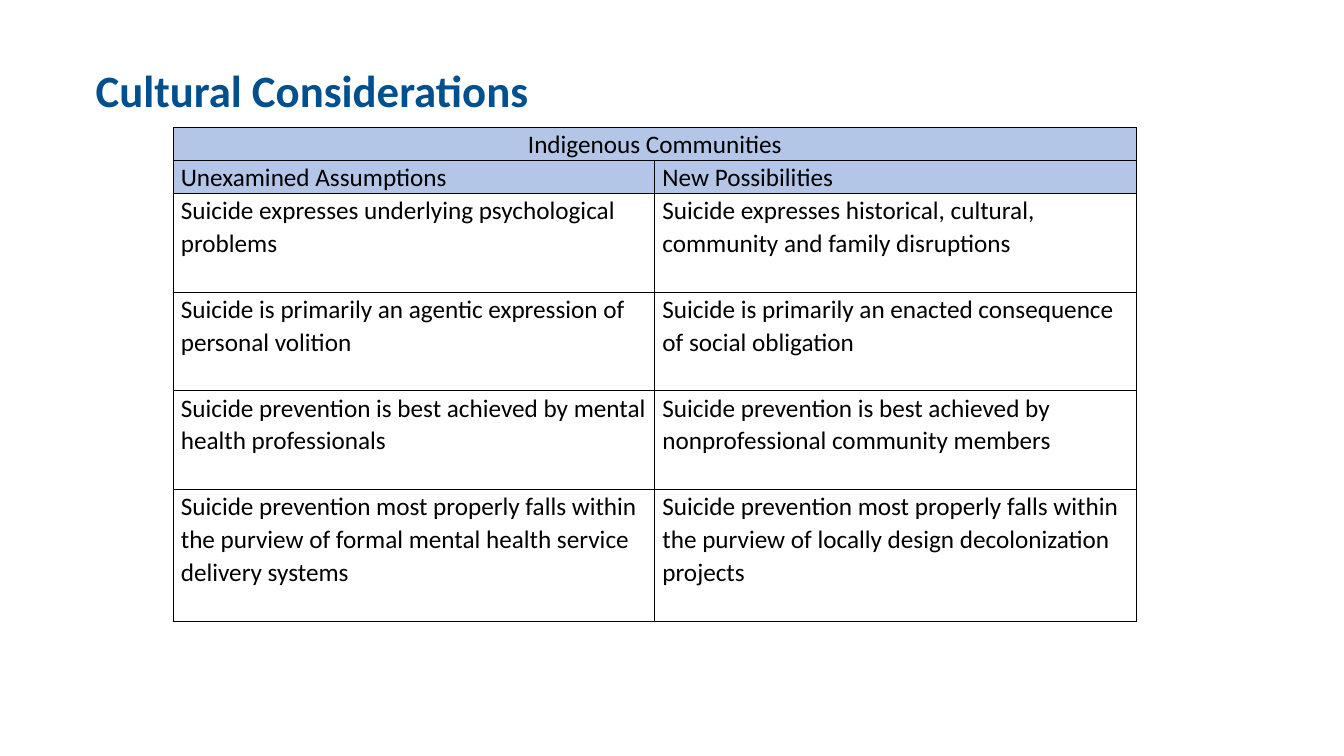
import pptx
import pptx.dml.color
import pptx.enum.text
import pptx.oxml
import pptx.oxml.ns
import pptx.util

Pt = pptx.util.Pt
FONT = "Calibri"
BLACK = "000000"
HEADER_FILL = "B4C6E7"
COMMUNITIES = "Indigenous Communities"
COMPARISON = [
    ("Unexamined Assumptions", "New Possibilities"),
    ("Suicide expresses underlying psychological problems",
     "Suicide expresses historical, cultural, community and family disruptions"),
    ("Suicide is primarily an agentic expression of personal volition",
     "Suicide is primarily an enacted consequence of social obligation"),
    ("Suicide prevention is best achieved by mental health professionals",
     "Suicide prevention is best achieved by nonprofessional community members"),
    ("Suicide prevention most properly falls within the purview of formal "
     "mental health service delivery systems",
     "Suicide prevention most properly falls within the purview of locally "
     "design decolonization projects"),
]
ROW_HEIGHTS = [23.5, 23.5, 70.5, 70.5, 70.5, 94]


def color(value):
    """Turn a hex string into a colour."""
    return pptx.dml.color.RGBColor.from_string(value)


def style_paragraph(paragraph, size, hex_color, spacing, bold=False):
    """Set the font and line spacing of a paragraph."""
    paragraph.line_spacing = spacing
    paragraph.font.name = FONT
    paragraph.font.size = Pt(size)
    paragraph.font.bold = bold
    paragraph.font.color.rgb = color(hex_color)


def add_title(slide, left, top, width, height):
    """Write the slide heading in the given box."""
    heading = slide.shapes.add_textbox(Pt(left), Pt(top), Pt(width), Pt(height)).text_frame
    heading.word_wrap = True
    heading.text = "Cultural Considerations"
    style_paragraph(heading.paragraphs[0], 32, "00508F", 0.9, bold=True)


def add_borders(cell):
    """Draw a thin black line on all four sides of a cell."""
    properties = cell._tc.get_or_add_tcPr()
    for position, side in enumerate(("lnL", "lnR", "lnT", "lnB")):
        properties.insert(position, pptx.oxml.parse_xml(
            f'<a:{side} {pptx.oxml.ns.nsdecls("a")} w="{Pt(1)}"><a:solidFill>'
            f'<a:srgbClr val="{BLACK}"/></a:solidFill></a:{side}>'))


def fill_cell(cell, text, is_header):
    """Write one table cell with its margins, fill and borders."""
    cell.margin_left = cell.margin_right = Pt(5.4)
    cell.margin_top = cell.margin_bottom = 0
    cell.text = text
    style_paragraph(cell.text_frame.paragraphs[0], 18, BLACK, 1.07)
    if is_header:
        cell.fill.solid()
        cell.fill.fore_color.rgb = color(HEADER_FILL)
    else:
        cell.fill.background()
    add_borders(cell)


def add_comparison(slide, left, top, width):
    """Build the two-column comparison table."""
    rows = [(COMMUNITIES, "")] + COMPARISON
    table = slide.shapes.add_table(len(rows), 2, Pt(left), Pt(top), Pt(width),
                                   Pt(sum(ROW_HEIGHTS))).table
    table.horz_banding = table.first_row = False
    for row_index, (texts, height) in enumerate(zip(rows, ROW_HEIGHTS)):
        table.rows[row_index].height = Pt(height)
        for column_index, text in enumerate(texts):
            fill_cell(table.cell(row_index, column_index), text, row_index < 2)
    communities = table.cell(0, 0)
    communities.merge(table.cell(0, 1))
    communities.text_frame.paragraphs[0].alignment = pptx.enum.text.PP_ALIGN.CENTER


def main():
    """Build and save the slide."""
    deck = pptx.Presentation()
    deck.slide_width, deck.slide_height = Pt(960), Pt(540)
    slide = deck.slides.add_slide(deck.slide_layouts[6])
    add_title(slide, 61.2, 45.4, 814.3, 54)
    add_comparison(slide, 123.8, 91.2, 688)
    deck.save("out.pptx")


if __name__ == "__main__":
    main()
